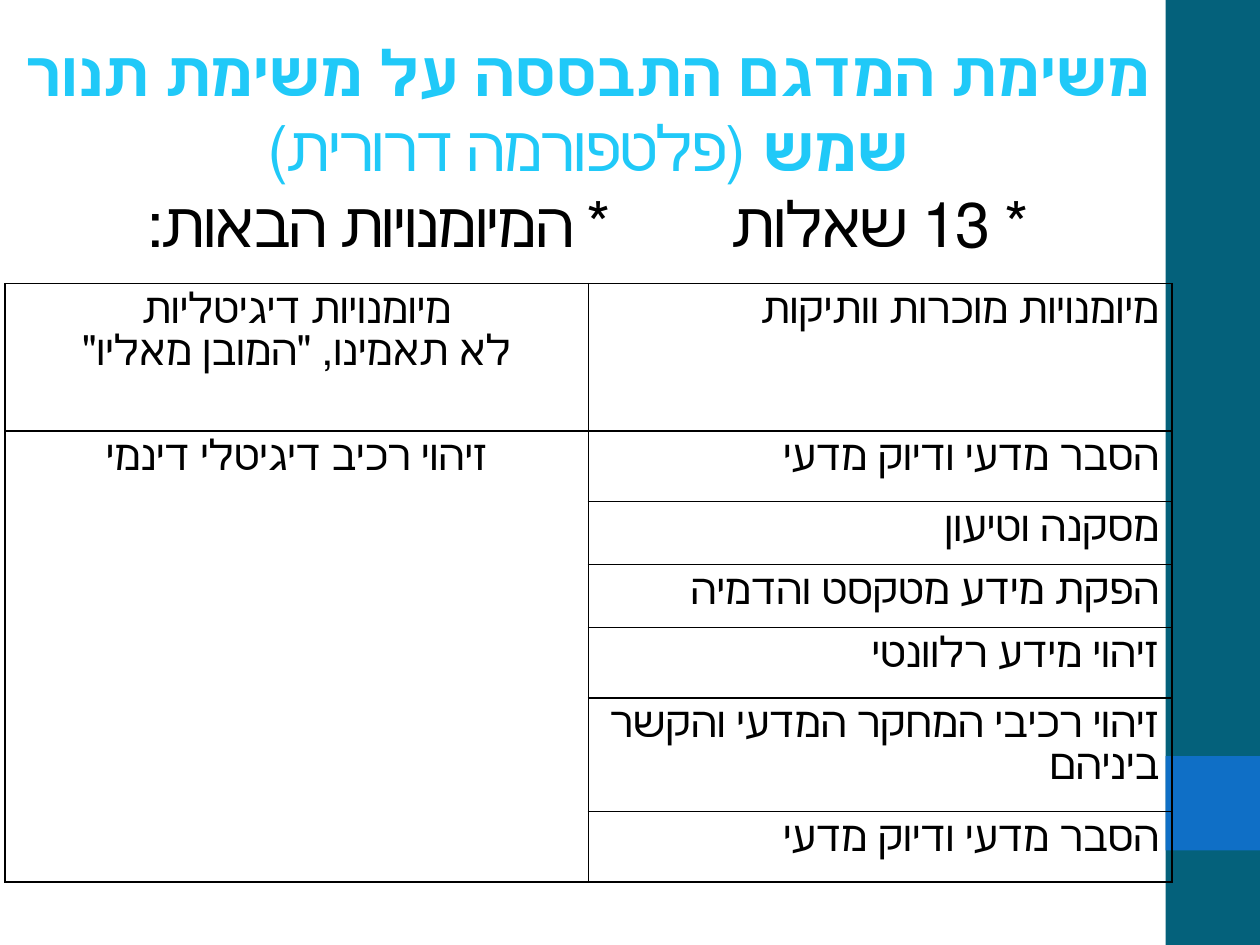
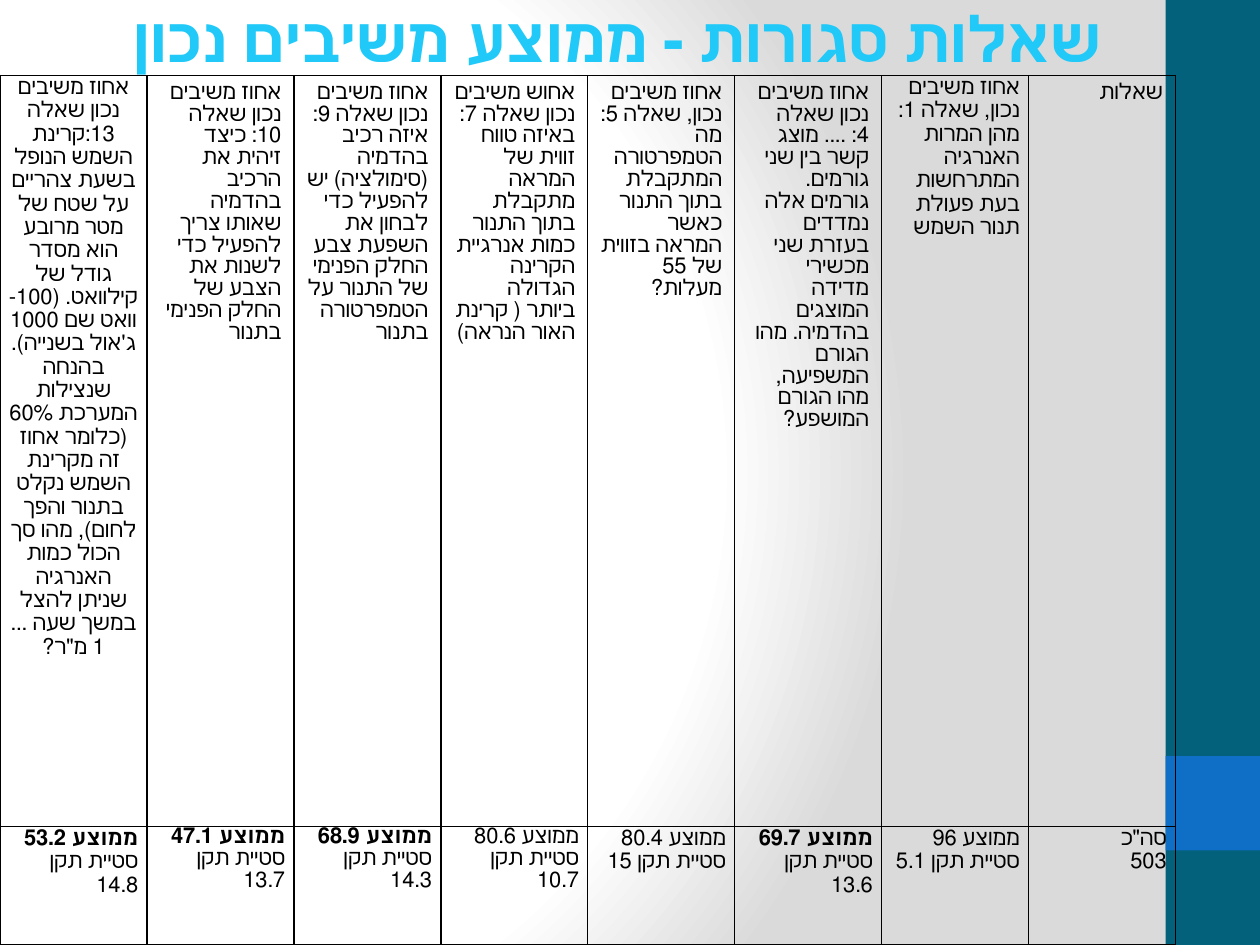
from pptx import Presentation, util as u
from pptx.dml.color import RGBColor
from pptx.enum import shapes, text
from pptx.oxml import parse_xml
from pptx.oxml.ns import nsdecls, qn

TEAL, BLUE, SKY, BLACK = "04617B", "0F6FC6", "20C9F8", "000000"
TITLE_FONT, GRID_FONT = "Lato", "Calibri"
LEFT, CENTER, RIGHT = text.PP_ALIGN.LEFT, text.PP_ALIGN.CENTER, text.PP_ALIGN.RIGHT

TASK_TITLE = [
    [("משימת המדגם התבססה על משימת תנור שמש ", SKY, True, -1),
     ("(פלטפורמה דרורית)", SKY, False, -1)],
    [("* 13 שאלות", BLACK, False, -1), (" ", BLACK, False, 60),
     ("* המיומנויות הבאות:", BLACK, False, -1)],
]
RESULTS_TITLE = [[("שאלות סגורות - ממוצע משיבים נכון", SKY, True, -1)]]

DIGITAL_HEADING = ["מיומנויות דיגיטליות", "לא תאמינו, \"המובן מאליו\""]
DIGITAL_SKILL = ["זיהוי רכיב דיגיטלי דינמי"]
KNOWN_SKILLS = [
    ("מיומנויות מוכרות וותיקות", 1.17),
    ("הסבר מדעי ודיוק מדעי", 0.56),
    ("מסקנה וטיעון", 0.5),
    ("הפקת מידע מטקסט והדמיה", 0.45),
    ("זיהוי מידע רלוונטי", 0.56),
    ("זיהוי רכיבי המחקר המדעי והקשר ביניהם", 0.84),
    ("הסבר מדעי ודיוק מדעי", 0.56),
]

QUESTIONS = [
    ("אחוז משיבים נכון שאלה 13:קרינת השמש הנופל בשעת צהריים על שטח של מטר מרובע "
     "הוא מסדר גודל של קילוואט. (100- וואט שם 1000 ג'אול בשנייה). בהנחה שנצילות "
     "המערכת 60% (כלומר אחוז זה מקרינת השמש נקלט בתנור והפך לחום), מהו סך הכול "
     "כמות האנרגיה שניתן להצל במשך שעה ... 1 מ\"ר?", 53.2, 14.8),
    ("אחוז משיבים נכון שאלה 10: כיצד זיהית את הרכיב בהדמיה שאותו צריך להפעיל "
     "כדי לשנות את הצבע של החלק הפנימי בתנור", 47.1, 13.7),
    ("אחוז משיבים נכון שאלה 9: איזה רכיב בהדמיה (סימולציה) יש להפעיל כדי לבחון "
     "את השפעת צבע החלק הפנימי של התנור על הטמפרטורה בתנור", 68.9, 14.3),
    ("אחוש משיבים נכון שאלה 7: באיזה טווח זווית של המראה מתקבלת בתוך התנור "
     "כמות אנרגיית הקרינה הגדולה ביותר ( קרינת האור הנראה)", 80.6, 10.7),
    ("אחוז משיבים נכון, שאלה 5: מה הטמפרטורה המתקבלת בתוך התנור כאשר המראה "
     "בזווית של 55 מעלות?", 80.4, 15),
    ("אחוז משיבים נכון שאלה 4: .... מוצג קשר בין שני גורמים. גורמים אלה נמדדים "
     "בעזרת שני מכשירי מדידה המוצגים בהדמיה. מהו הגורם המשפיעה, מהו הגורם "
     "המושפע?", 69.7, 13.6),
    ("אחוז משיבים נכון, שאלה 1: מהן המרות האנרגיה המתרחשות בעת פעולת תנור השמש",
     96, 5.1),
]
QUESTION_LABEL, TOTAL_LABEL = "שאלות", ["סה\"כ", "503"]
LOOSE_QUESTIONS = (0, 6)
SINGLE_SPACED_RESULTS = (1, 2, 3)
WEAK_MEAN = 70
LOOSE = 1.07


def color(value):
    return RGBColor.from_string(value)


def set_font(font, name, size):
    font.name, font.size = name, u.Pt(size)


def add_page(deck):
    page = deck.slides.add_slide(deck.slide_layouts[6])
    for top, height, fill in ((0, 7.5, TEAL), (6, 0.75, BLUE)):
        band = page.shapes.add_shape(
            shapes.MSO_SHAPE.RECTANGLE,
            *map(u.Inches, (9.25, top, 0.75, height)))
        band.shadow.inherit = False
        band.fill.solid()
        band.fill.fore_color.rgb = color(fill)
        band.line.fill.background()
    return page


def make_rtl(para, align):
    para.alignment = align
    para._p.get_or_add_pPr().set("rtl", "1")


def add_title(page, place, lines, align, bottom=0.05):
    box = page.shapes.add_textbox(*map(u.Inches, place))
    frame = box.text_frame
    frame.word_wrap = True
    frame.vertical_anchor = text.MSO_ANCHOR.MIDDLE
    frame.margin_bottom = u.Inches(bottom)
    for index, line in enumerate(lines):
        para = frame.add_paragraph() if index else frame.paragraphs[0]
        make_rtl(para, align)
        set_font(para.font, TITLE_FONT, 36)
        for words, fill, bold, spacing in line:
            span = para.add_run()
            span.text = words
            span.font.bold = bold
            span.font.color.rgb = color(fill)
            span._r.get_or_add_rPr().set("spc", str(spacing * 100))


def add_grid(page, left, top, widths, heights):
    table = page.shapes.add_table(
        len(heights), len(widths),
        *map(u.Inches, (left, top, sum(widths), sum(heights)))).table
    table.first_row = table.horz_banding = False
    for column, width in zip(table.columns, widths):
        column.width = u.Inches(width)
    for row, height in zip(table.rows, heights):
        row.height = u.Inches(height)
    for cell in table.iter_cells():
        cell.fill.background()
        properties = cell._tc.get_or_add_tcPr()
        for index, side in enumerate(("lnL", "lnR", "lnT", "lnB")):
            properties.insert(index, parse_xml(
                f'<a:{side} {nsdecls("a")} w="12700"><a:solidFill>'
                f'<a:srgbClr val="{BLACK}"/></a:solidFill></a:{side}>'))
    return table


def fill_cell(cell, lines, font, size, align=RIGHT, spacing=None,
              tight=False, bold_first=False):
    if tight:
        cell.margin_left = cell.margin_right = u.Inches(0.07)
        cell.margin_top = cell.margin_bottom = 0
    frame = cell.text_frame
    for index, line in enumerate(lines):
        para = frame.add_paragraph() if index else frame.paragraphs[0]
        para.text = line
        make_rtl(para, align)
        set_font(para.font, font, size)
        para.font.color.rgb = color(BLACK)
        para.font.bold = bold_first and index == 0
        if spacing:
            para.line_spacing = spacing


def shade_background(page):
    page.background.fill.solid()
    properties = page.element.find(".//" + qn("p:bgPr"))
    stops = "".join(
        f'<a:gs pos="{position * 1000}"><a:srgbClr val="{fill}"/></a:gs>'
        for position, fill in ((0, "FFFFFF"), (75, "FFFFFF"), (100, "DADADA")))
    properties.replace(properties[0], parse_xml(
        f'<a:gradFill {nsdecls("a")}><a:gsLst>{stops}</a:gsLst>'
        '<a:path path="circle"><a:fillToRect l="20000" t="50000" r="100000" '
        'b="50000"/></a:path></a:gradFill>'))


def build_skills(deck):
    page = add_page(deck)
    add_title(page, (-0.29, 0.84, 9.92, 1.25), TASK_TITLE, CENTER, bottom=0.65)
    table = add_grid(page, 0.04, 2.25, [4.63] * 2,
                     [height for _, height in KNOWN_SKILLS])
    table.cell(1, 0).merge(table.cell(len(KNOWN_SKILLS) - 1, 0))
    for row, lines in enumerate((DIGITAL_HEADING, DIGITAL_SKILL)):
        fill_cell(table.cell(row, 0), lines, TITLE_FONT, 24, CENTER)
    for row, (skill, _) in enumerate(KNOWN_SKILLS):
        fill_cell(table.cell(row, 1), [skill], TITLE_FONT, 24)


def build_results(deck):
    page = add_page(deck)
    shade_background(page)
    add_title(page, (0.95, -0.33, 9.07, 1.25), RESULTS_TITLE, LEFT)
    last = len(QUESTIONS)
    table = add_grid(page, 0, 0.6, [9.33 / (last + 1)] * (last + 1), [5.96, 0.94])
    for column, (question, mean, deviation) in enumerate(QUESTIONS):
        loose = column in LOOSE_QUESTIONS
        fill_cell(table.cell(0, column), [question], GRID_FONT, 12.5,
                  RIGHT if column else CENTER, LOOSE if loose else None, loose)
        fill_cell(table.cell(1, column),
                  [f"ממוצע {mean}", f"סטיית תקן {deviation}"], GRID_FONT, 12.5,
                  spacing=None if column in SINGLE_SPACED_RESULTS else LOOSE,
                  tight=True, bold_first=mean < WEAK_MEAN)
    fill_cell(table.cell(0, last), [QUESTION_LABEL], GRID_FONT, 12.5)
    fill_cell(table.cell(1, last), TOTAL_LABEL, GRID_FONT, 12.5,
              spacing=LOOSE, tight=True)


def main():
    deck = Presentation()
    deck.slide_width, deck.slide_height = u.Inches(10), u.Inches(7.5)
    build_skills(deck)
    build_results(deck)
    deck.save("out.pptx")


if __name__ == "__main__":
    main()
